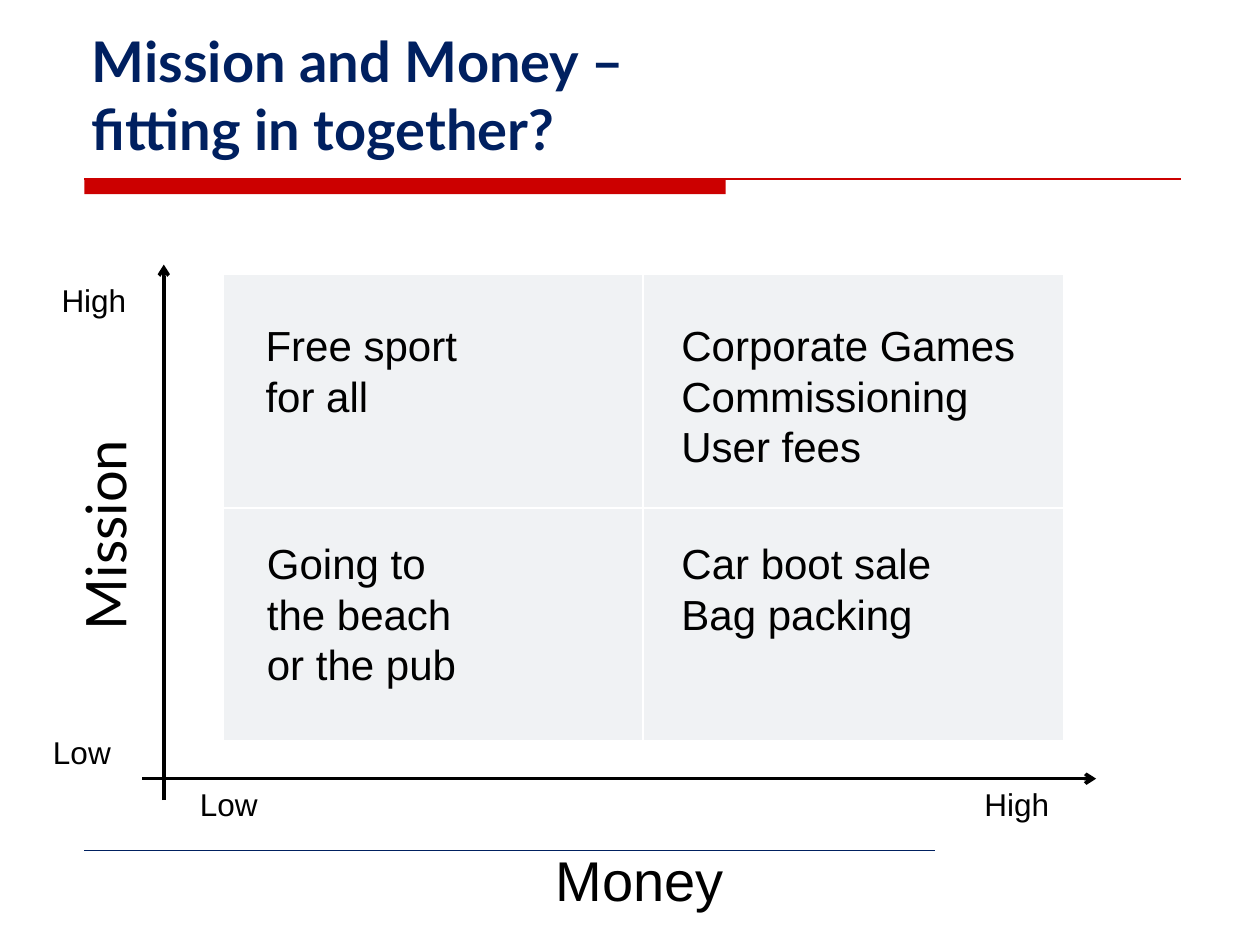
from pptx import Presentation
from pptx.dml.color import RGBColor
from pptx.enum import shapes, text
from pptx.oxml import parse_xml
from pptx.oxml.ns import nsdecls
from pptx.util import Inches, Pt

NAVY = RGBColor(0x00, 0x20, 0x60)
RED = RGBColor(0xCC, 0x00, 0x00)
BLACK = RGBColor(0x00, 0x00, 0x00)
PALE = RGBColor(0xF0, 0xF2, 0xF4)

# Content; boxes are left, top, width, height in inches
TITLE = "Mission and Money –\vfitting in together?"
QUADRANTS = [
    (["Free sport", "for all"], (2.01, 2.49, 2.36, 0.91)),
    (["Corporate Games", "Commissioning", "User fees"], (5.31, 2.49, 2.94, 1.31)),
    (["Going to", "the beach or the pub"], (2.02, 4.22, 1.81, 1.31)),
    (["Car boot sale", "Bag packing"], (5.31, 4.22, 2.19, 0.91)),
]
SCALE_LABELS = [
    ("High", (0.27, 2.18, 0.95, 0.4)),
    ("High", (7.6, 6.18, 0.94, 0.4)),
    ("Low", (1.3, 6.18, 1.03, 0.4)),
    ("Low", (0, 5.77, 1.3, 0.4)),
]
AXES = [(1.3, 6.35, 1.3, 2.1), (1.13, 6.18, 8.7, 6.18)]
GRID = (1.77, 2.18, 6.67, 3.7)


def inches(values):
    return [Inches(v) for v in values]


def add_line(slide, ends, color, width, arrow=False):
    line = slide.shapes.add_connector(shapes.MSO_CONNECTOR.STRAIGHT, *inches(ends))
    line.line.color.rgb = color
    line.line.width = Pt(width)
    if arrow:
        line.line._get_or_add_ln().append(
            parse_xml(f'<a:tailEnd {nsdecls("a")} type="arrow"/>'))
    line._element.spPr.append(parse_xml(f'<a:effectLst {nsdecls("a")}/>'))


def add_label(slide, lines, box, size, align=None, font="Arial", vertical=False):
    frame = slide.shapes.add_textbox(*inches(box)).text_frame
    frame.word_wrap = True
    if vertical:
        frame._txBody.bodyPr.set("vert", "vert270")
    frame.text = "\n".join(lines)
    for paragraph in frame.paragraphs:
        paragraph.alignment = align
        paragraph.font.name = font
        paragraph.font.size = Pt(size)
        paragraph.font.color.rgb = BLACK


def add_grid(slide):
    table = slide.shapes.add_table(2, 2, *inches(GRID)).table
    table.first_row = table.horz_banding = False
    for cell in table.iter_cells():
        properties = cell._tc.get_or_add_tcPr()
        for side in ("lnL", "lnR", "lnT", "lnB"):
            properties.append(parse_xml(
                f'<a:{side} {nsdecls("a")} w="12700"><a:solidFill>'
                f'<a:srgbClr val="FFFFFF"/></a:solidFill></a:{side}>'))
        cell.fill.solid()
        cell.fill.fore_color.rgb = PALE


def main():
    deck = Presentation()
    deck.slide_width, deck.slide_height = inches((10, 7.5))
    slide = deck.slides.add_slide(deck.slide_layouts[5])

    # Title
    title = slide.shapes.title
    title.left, title.top, title.width, title.height = inches((0.63, 0.33, 8.75, 1))
    title.text_frame.text = TITLE
    title.text_frame.vertical_anchor = text.MSO_ANCHOR.BOTTOM
    heading = title.text_frame.paragraphs[0]
    heading.alignment = text.PP_ALIGN.LEFT
    heading.font.name = "Lato"
    heading.font.size = Pt(32)
    heading.font.bold = True
    heading.font.color.rgb = NAVY

    # Title rule and footer rule
    bar = slide.shapes.add_shape(
        shapes.MSO_SHAPE.RECTANGLE, *inches((0.67, 1.42, 5.09, 0.12)))
    bar.shadow.inherit = False
    bar.fill.solid()
    bar.fill.fore_color.rgb = RED
    bar.line.fill.background()
    add_line(slide, (0.67, 1.42, 9.37, 1.42), RED, 0.75)
    add_line(slide, (0.67, 6.75, 7.42, 6.75), NAVY, 0.25)

    # Matrix
    add_grid(slide)
    for lines, box in QUADRANTS:
        add_label(slide, lines, box, 24)

    # Axes with names and scale ends
    for ends in AXES:
        add_line(slide, ends, BLACK, 2, arrow=True)
    center = text.PP_ALIGN.CENTER
    add_label(slide, ["Money"], (3.66, 6.66, 2.84, 0.64), 32, center)
    add_label(slide, ["Mission"], (0.51, 2.69, 0.74, 3.11), 32, center, "Lato", True)
    for label, box in SCALE_LABELS:
        add_label(slide, [label], box, 18, center)

    deck.save("out.pptx")


if __name__ == "__main__":
    main()
